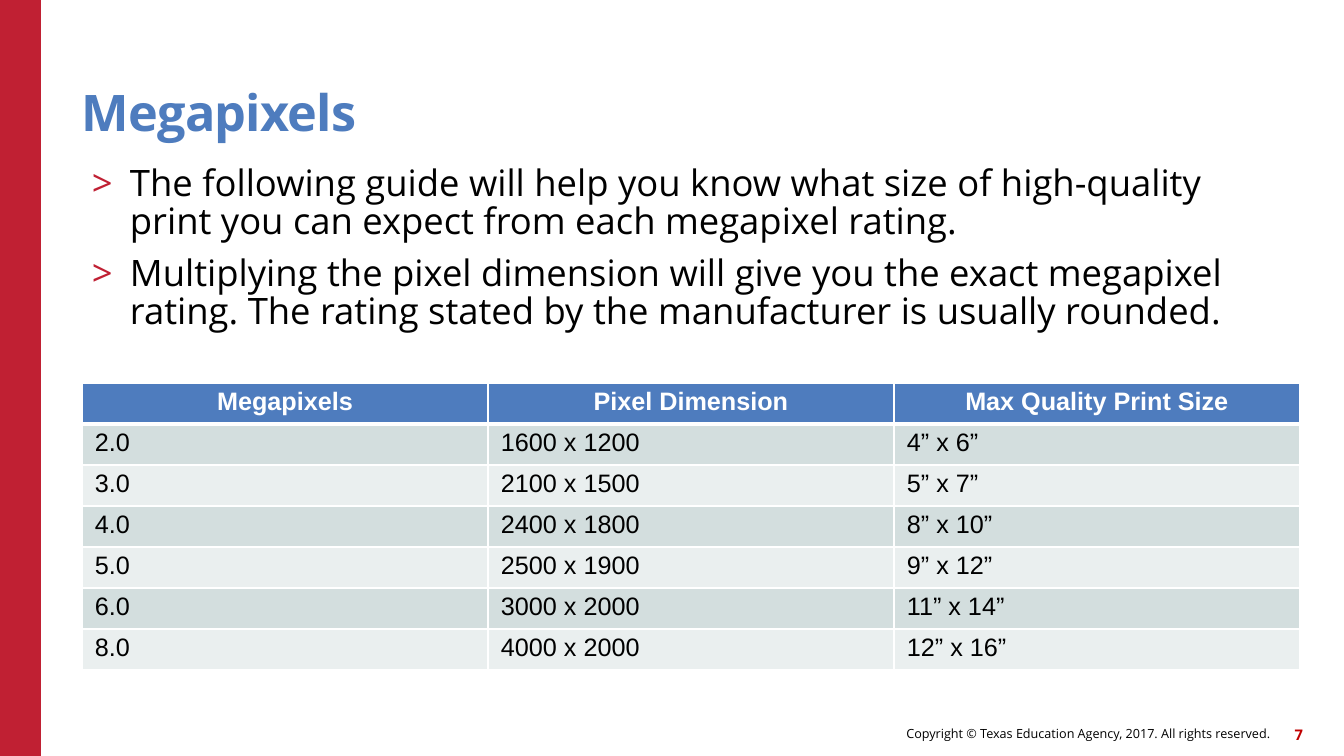
from lxml import etree
from pptx import Presentation
from pptx import util as u
from pptx.dml.color import RGBColor
from pptx.enum import shapes, text
from pptx.oxml.ns import qn

RED = RGBColor(0xC0, 0x20, 0x33)
DARK_RED = RGBColor(0xC0, 0x00, 0x00)
BLUE = RGBColor(0x4E, 0x7C, 0xBE)
BLACK = RGBColor(0x00, 0x00, 0x00)
WHITE = RGBColor(0xFF, 0xFF, 0xFF)
BAND_DARK = RGBColor(0xD3, 0xDE, 0xDE)
BAND_LIGHT = RGBColor(0xEA, 0xEF, 0xEF)

PX = 914400 / 100.8
LEFT, CONTENT_W = 82, 1218


def px(*lengths):
    return [u.Emu(round(n * PX)) for n in lengths]


def add_run(p, words, size, color, font="Open Sans", bold=False):
    r = p.add_run()
    r.text = words
    r.font.name, r.font.size, r.font.bold = font, u.Pt(size), bold
    r.font.color.rgb = color
    return r


prs = Presentation()
prs.slide_width, prs.slide_height = px(1344, 756)
s = prs.slides.add_slide(prs.slide_layouts[6])

# Side bar
sp = s.shapes.add_shape(shapes.MSO_SHAPE.RECTANGLE, *px(0, 0, 41, 756))
sp.shadow.inherit = False
sp.fill.solid()
sp.fill.fore_color.rgb = RED
sp.line.fill.background()

# Title, copyright line and page number
ANCHOR, ALIGN = text.MSO_ANCHOR, text.PP_ALIGN
labels = [
    ("Megapixels", (LEFT, 45, 1109, 97), 36, BLUE, True, ANCHOR.BOTTOM, ALIGN.LEFT),
    ("Copyright © Texas Education Agency, 2017. All rights reserved.",
     (619, 718, 651, 32), 9, BLACK, False, ANCHOR.MIDDLE, ALIGN.RIGHT),
    ("7", (1261, 719, 42, 32), 10.5, DARK_RED, True, ANCHOR.MIDDLE, ALIGN.RIGHT),
]
for words, box, size, color, bold, anchor, align in labels:
    tf = s.shapes.add_textbox(*px(*box)).text_frame
    tf.word_wrap = True
    tf.vertical_anchor = anchor
    tf.margin_left = tf.margin_top = tf.margin_right = tf.margin_bottom = 0
    p = tf.paragraphs[0]
    p.alignment = align
    r = add_run(p, words, size, color, bold=bold)
    if size == 36:
        p.line_spacing = 0.9
        r.font._element.set("spc", "-60")

# Bullets
bullets = [
    "The following guide will help you know what size of high-quality "
    "print you can expect from each megapixel rating.",
    "Multiplying the pixel dimension will give you the exact megapixel "
    "rating. The rating stated by the manufacturer is usually rounded.",
]
tf = s.shapes.add_textbox(*px(LEFT, 156, CONTENT_W, 211)).text_frame
tf.word_wrap = True
tf.margin_left, tf.margin_top, tf.margin_right, tf.margin_bottom = px(10, 10, 20, 5)
hang = px(38)[0]
for i, words in enumerate(bullets):
    p = tf.add_paragraph() if i else tf.paragraphs[0]
    p.line_spacing = 0.87
    p.space_before = u.Pt(10 if i else 0)
    pPr = p._p.get_or_add_pPr()
    pPr.set("marL", str(hang))
    pPr.set("indent", str(-hang))
    bu_color = etree.SubElement(pPr, qn("a:buClr"))
    etree.SubElement(bu_color, qn("a:srgbClr"), val=str(RED))
    etree.SubElement(pPr, qn("a:buFont"), typeface="Open Sans")
    etree.SubElement(pPr, qn("a:buChar"), char=">")
    add_run(p, words, 26, BLACK)

# Print size table
rows = [
    ("Megapixels", "Pixel Dimension", "Max Quality Print Size"),
    ("2.0", "1600 x 1200", "4” x 6”"),
    ("3.0", "2100 x 1500", "5” x 7”"),
    ("4.0", "2400 x 1800", "8” x 10”"),
    ("5.0", "2500 x 1900", "9” x 12”"),
    ("6.0", "3000 x 2000", "11” x 14”"),
    ("8.0", "4000 x 2000", "12” x 16”"),
]
table = s.shapes.add_table(
    len(rows), 3, *px(LEFT, 383, CONTENT_W, 41 * len(rows))).table
for i, row in enumerate(rows):
    header = i == 0
    for j, words in enumerate(row):
        cell = table.cell(i, j)
        cell.margin_left, cell.margin_top, cell.margin_right, cell.margin_bottom = px(13, 5, 13, 5)
        p = cell.text_frame.paragraphs[0]
        p.alignment = ALIGN.CENTER if header else ALIGN.LEFT
        add_run(p, words, 18, WHITE if header else BLACK, "Arial", header)
        # Borders go before the fill in the cell properties
        tcPr = cell._tc.get_or_add_tcPr()
        for side in ("lnL", "lnR", "lnT", "lnB"):
            thick = (i, side) in ((0, "lnB"), (1, "lnT"))
            ln = etree.SubElement(tcPr, qn("a:" + side), w=str(u.Pt(3 if thick else 1)))
            line_fill = etree.SubElement(ln, qn("a:solidFill"))
            etree.SubElement(line_fill, qn("a:srgbClr"), val=str(WHITE))
        cell.fill.solid()
        cell.fill.fore_color.rgb = BLUE if header else BAND_DARK if i % 2 else BAND_LIGHT

prs.save("out.pptx")
